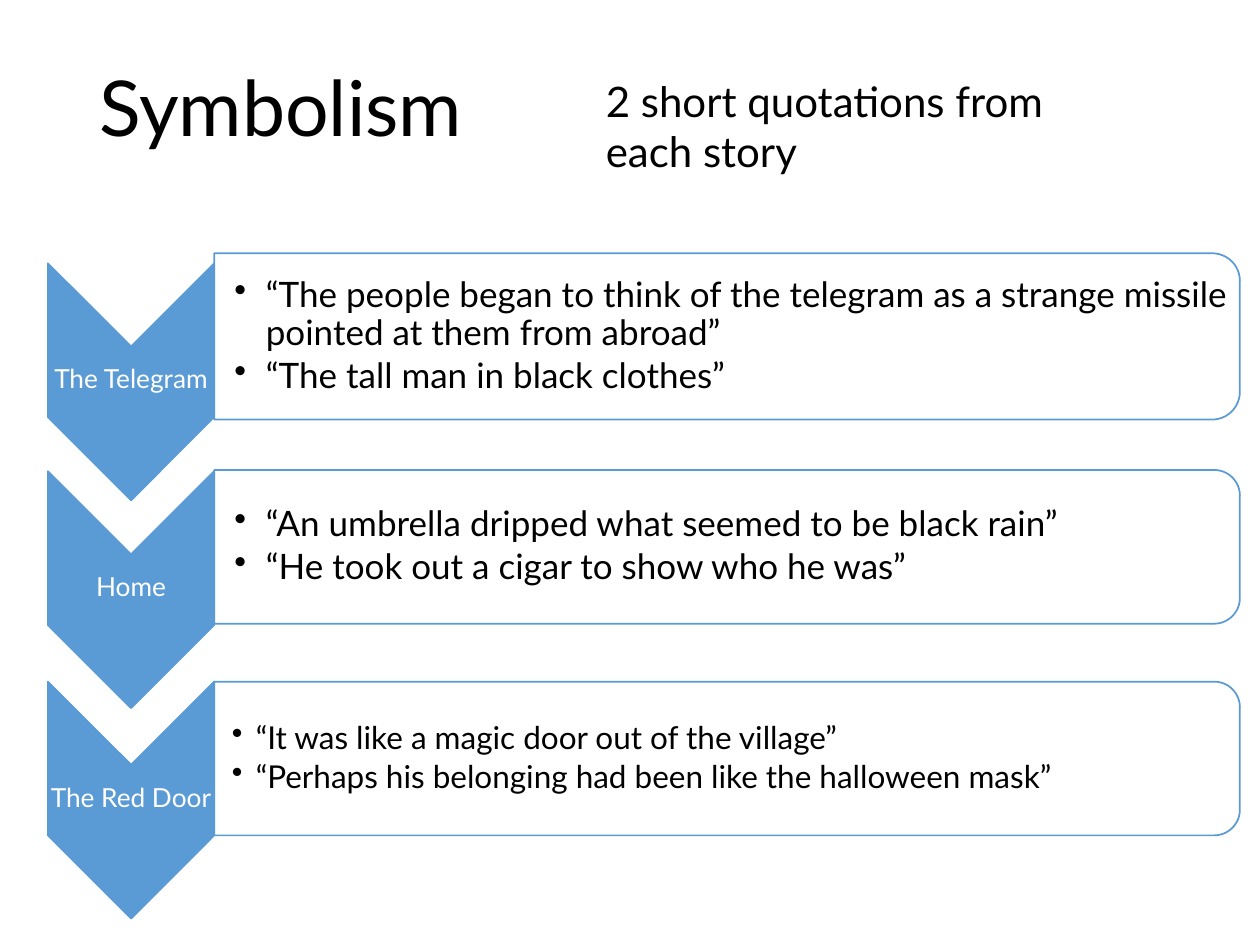
from dataclasses import dataclass

import lxml.etree
import pptx
import pptx.dml.color
import pptx.enum.shapes
import pptx.enum.text
import pptx.oxml.ns
import pptx.util

Inches = pptx.util.Inches
Pt = pptx.util.Pt
Kind = pptx.enum.shapes.MSO_SHAPE
Align = pptx.enum.text.PP_ALIGN
Anchor = pptx.enum.text.MSO_ANCHOR
qn = pptx.oxml.ns.qn

FONT = "Lato"
COLORS = {"blue": "5B9BD5", "white": "FFFFFF", "black": "000000"}
LEFT = 0.38    # left edge of the arrows
ARROW = 1.32   # arrow width
SPAN = 1.88    # arrow length
WIDE = 8.14    # panel width


@dataclass
class Row:
    name: str
    quotes: list[str]
    tip: float     # middle of the arrow
    mid: float     # middle of the panel
    high: float    # panel height
    size: int = 20
    inset: float = 0.16
    indent: float = 0.25


ROWS = [
    Row("The Telegram",
        ["“The people began to think of the telegram as a strange missile pointed at them from abroad”",
         "“The tall man in black clothes”"], 3.03, 2.67, 1.32),
    Row("Home",
        ["“An umbrella dripped what seemed to be black rain”",
         "“He took out a cigar to show who he was”"], 4.68, 4.34, 1.22),
    Row("The Red Door",
        ["“It was like a magic door out of the village”",
         "“Perhaps his belonging had been like the halloween mask”"],
        6.35, 6.02, 1.22, 18, 0.14, 0.19),
]


def tint(name: str) -> pptx.dml.color.RGBColor:
    return pptx.dml.color.RGBColor.from_string(COLORS[name])


def add_turned(slide, kind, left: float, mid: float, wide: float, high: float, fill: str):
    """Draw a shape turned by 90 degrees that shows as wide by high."""
    shape = slide.shapes.add_shape(
        kind, Inches(left + (wide - high) / 2), Inches(mid - wide / 2),
        Inches(high), Inches(wide))
    shape.rotation = 90
    shape.shadow.inherit = False
    shape.fill.solid()
    shape.fill.fore_color.rgb = tint(fill)
    shape.line.color.rgb = tint("blue")
    shape.line.width = Pt(1)
    return shape


def add_text(slide, box: tuple, lines: list[str], size: int, color: str = "black",
             anchor=Anchor.MIDDLE, insets: tuple | None = None,
             align=None, space: float | None = None, indent: float = 0) -> None:
    frame = slide.shapes.add_textbox(*map(Inches, box)).text_frame
    frame.word_wrap = True
    frame.vertical_anchor = anchor
    if insets:
        (frame.margin_left, frame.margin_top,
         frame.margin_right, frame.margin_bottom) = map(Inches, insets)
    for i, line in enumerate(lines):
        para = frame.paragraphs[0] if i == 0 else frame.add_paragraph()
        para.text = line
        if indent:
            para.level = 1
            props = para._p.get_or_add_pPr()
            props.set("marL", str(Inches(indent)))
            props.set("indent", str(-Inches(indent)))
            lxml.etree.SubElement(props, qn("a:buChar")).set("char", "•")
            para.space_after = Pt(size * 0.15)
        para.alignment = align
        para.line_spacing = space
        para.font.name = FONT
        para.font.size = Pt(size)
        para.font.color.rgb = tint(color)


def add_row(slide, row: Row) -> None:
    # Arrow and its label
    add_turned(slide, Kind.CHEVRON, LEFT, row.tip, ARROW, SPAN, "blue")
    add_text(slide, (LEFT, row.tip - 0.29, ARROW, 0.56), [row.name], 15, "white",
             insets=(0.01,) * 4, align=Align.CENTER, space=0.9)
    # Panel, slightly see-through, and its quotes
    edge = LEFT + ARROW
    panel = add_turned(slide, Kind.ROUND_2_SAME_RECTANGLE, edge, row.mid,
                       WIDE, row.high, "white")
    color = panel._element.spPr.find(qn("a:solidFill"))[0]
    lxml.etree.SubElement(color, qn("a:alpha")).set("val", "90000")
    high = row.high - 0.12
    add_text(slide, (edge, row.mid - high / 2, WIDE - 0.06, high), row.quotes, row.size,
             insets=(row.inset, 0.01, 0.01, 0.01), space=0.9, indent=row.indent)


def main() -> None:
    deck = pptx.Presentation()
    deck.slide_width, deck.slide_height = Inches(10), Inches(7.5)
    slide = deck.slides.add_slide(deck.slide_layouts[6])
    # Heading and task
    add_text(slide, (0.69, 0.16, 8.62, 1.45), ["Symbolism"], 44, space=0.9)
    add_text(slide, (4.71, 0.55, 4.3, 0.91), ["2 short quotations from each story"], 24,
             anchor=Anchor.TOP)
    # One row for each story
    for row in ROWS:
        add_row(slide, row)
    deck.save("out.pptx")


if __name__ == "__main__":
    main()
